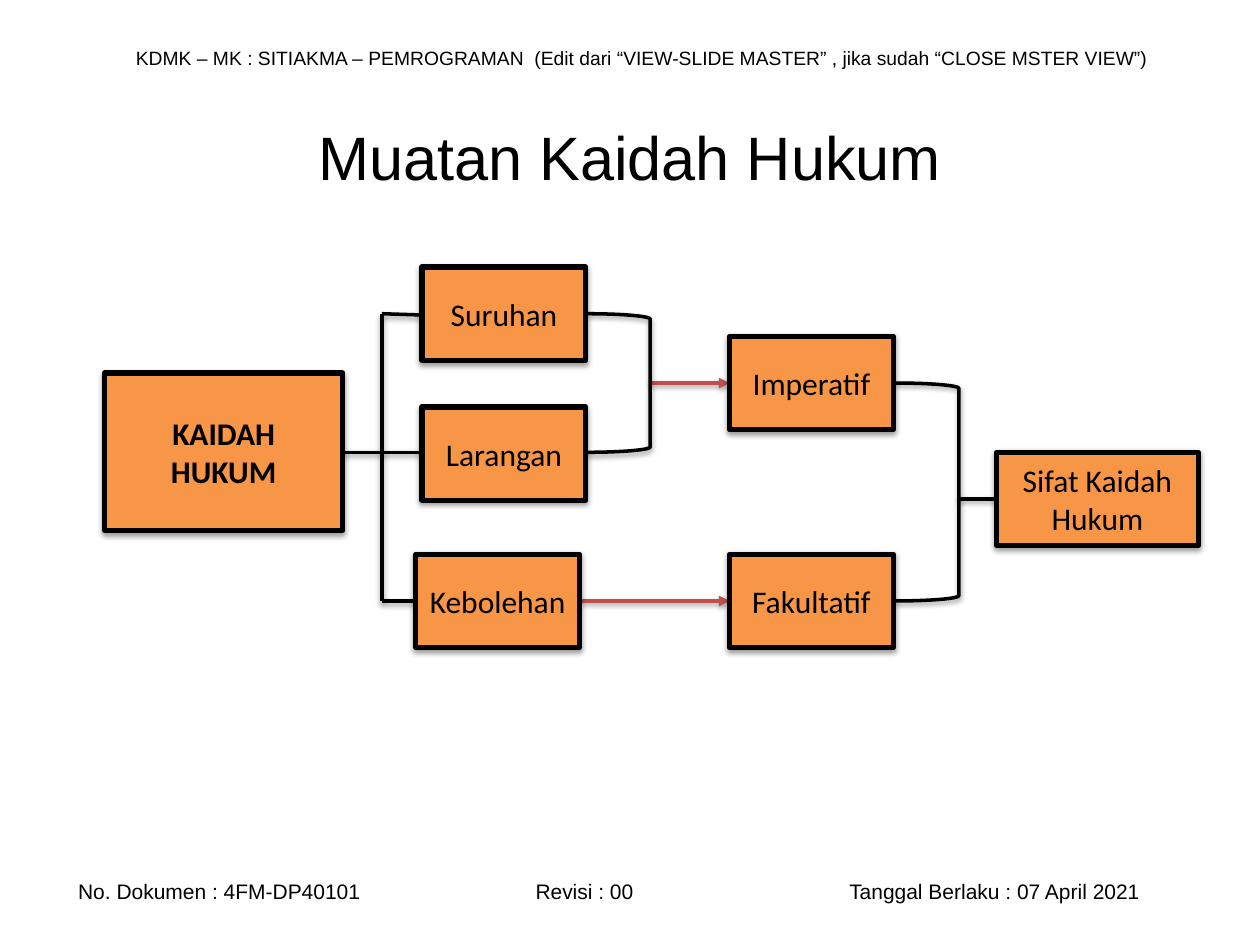
from lxml.etree import SubElement
from pptx import Presentation
from pptx.dml.color import RGBColor
from pptx.enum.shapes import MSO_CONNECTOR, MSO_SHAPE
from pptx.enum.text import MSO_ANCHOR, PP_ALIGN
from pptx.oxml import parse_xml
from pptx.oxml.ns import nsdecls, qn
from pptx.util import Inches, Pt


def finish(sp, color, width):
    sp.line.color.rgb = RGBColor.from_string(color)
    sp.line.width = Pt(width)
    sp._element.spPr.append(parse_xml(
        f'<a:effectLst {nsdecls("a")}><a:outerShdw blurRad="40000" dist="20000" '
        'dir="5400000" rotWithShape="0"><a:srgbClr val="000000">'
        '<a:alpha val="38000"/></a:srgbClr></a:outerShdw></a:effectLst>'))


def write(sp, text, size, font, align, bold=False):
    tf = sp.text_frame
    tf.word_wrap = True
    tf.vertical_anchor = MSO_ANCHOR.MIDDLE
    p = tf.paragraphs[0]
    p.alignment = align
    r = p.add_run()
    r.text = text
    r.font.size = Pt(size)
    r.font.name = font
    r.font.bold = bold
    r.font.color.rgb = RGBColor.from_string("000000")
    return p


prs = Presentation()
prs.slide_width = Inches(10)
prs.slide_height = Inches(7.5)
s = prs.slides.add_slide(prs.slide_layouts[6])

header = s.shapes.add_textbox(Inches(0.98), Inches(0.31), Inches(8.35), Inches(0.29))
write(header, "KDMK – MK : SITIAKMA – PEMROGRAMAN  (Edit dari “VIEW-SLIDE MASTER” , "
      "jika sudah “CLOSE MSTER VIEW”)", 11, "Arial", PP_ALIGN.LEFT)

footer = s.shapes.add_textbox(Inches(0.2), Inches(6.92), Inches(9.45), Inches(0.3))
footer.text_frame.margin_left = Inches(0.42)
p = write(footer, "No. Dokumen : 4FM-DP40101\tRevisi : 00\tTanggal Berlaku : 07 April 2021",
          12, "Arial", PP_ALIGN.LEFT)
tabs = SubElement(p._p.get_or_add_pPr(), qn("a:tabLst"))
for pos in (3.63, 6.12):
    SubElement(tabs, qn("a:tab"), pos=str(Inches(pos)), algn="l")

title = s.shapes.add_textbox(Inches(0.5), Inches(0.61), Inches(9), Inches(1.25))
write(title, "Muatan Kaidah Hukum", 35, "Arial", PP_ALIGN.CENTER)

lines = [
    (2.72, 3.59, 3.35, 3.59, "000000"),
    (3.03, 2.49, 3.03, 4.77, "000000"),
    (3.03, 2.49, 3.35, 2.5, "000000"),
    (3.03, 4.77, 3.35, 4.77, "000000"),
    (7.6, 3.96, 7.92, 3.96, "000000"),
    (5.16, 3.04, 5.79, 3.04, "C0504D"),
    (4.61, 4.77, 5.79, 4.77, "C0504D"),
]
for x1, y1, x2, y2, color in lines:
    line = s.shapes.add_connector(MSO_CONNECTOR.STRAIGHT, Inches(x1), Inches(y1),
                                  Inches(x2), Inches(y2))
    finish(line, color, 2)
    if color == "C0504D":
        SubElement(line.line._get_or_add_ln(), qn("a:tailEnd"), type="triangle")

for x, y, h in [(4.65, 2.49, 1.1), (7.1, 3.04, 1.73)]:
    bracket = s.shapes.add_shape(MSO_SHAPE.RIGHT_BRACKET, Inches(x), Inches(y),
                                 Inches(0.51), Inches(h))
    bracket.fill.background()
    finish(bracket, "000000", 2)

boxes = [
    ("KAIDAH HUKUM", 0.83, 2.96, 1.89, 1.25),
    ("Suruhan", 3.35, 2.12, 1.3, 0.74),
    ("Larangan", 3.35, 3.23, 1.3, 0.74),
    ("Kebolehan", 3.3, 4.4, 1.3, 0.74),
    ("Imperatif", 5.79, 2.67, 1.3, 0.74),
    ("Fakultatif", 5.79, 4.4, 1.3, 0.74),
    ("Sifat Kaidah Hukum", 7.91, 3.59, 1.6, 0.74),
]
for text, x, y, w, h in boxes:
    box = s.shapes.add_shape(MSO_SHAPE.RECTANGLE, Inches(x), Inches(y), Inches(w), Inches(h))
    box.fill.solid()
    box.fill.fore_color.rgb = RGBColor.from_string("F79646")
    finish(box, "000000", 3)
    write(box, text, 18, "Calibri", PP_ALIGN.CENTER, text == "KAIDAH HUKUM")

prs.save("out.pptx")
